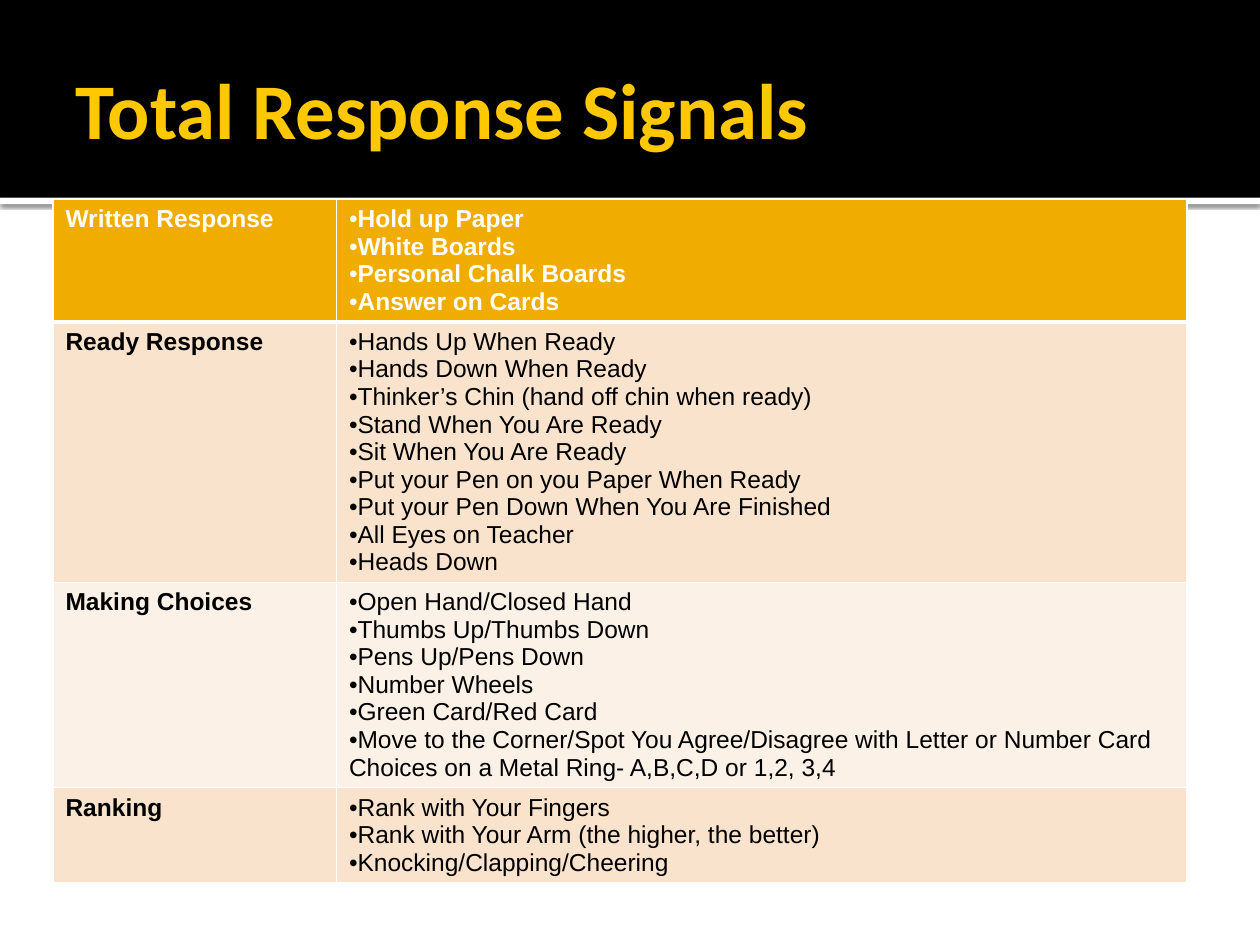
from lxml.etree import SubElement
from pptx import Presentation
from pptx.dml.color import RGBColor
from pptx.enum.shapes import MSO_SHAPE
from pptx.enum.text import MSO_ANCHOR, PP_ALIGN
from pptx.oxml.ns import qn
from pptx.util import Inches, Pt


def paint(fill, color):
    fill.solid()
    fill.fore_color.rgb = RGBColor.from_string(color)


def style(para, size, font, color, bold):
    for span in para.runs:
        span.font.size = Pt(size)
        span.font.name = font
        span.font.bold = bold
        paint(span.font.fill, color)


signals = [
    ("Written Response", "F0AD00", "FFFFFF", 4, [
        "Hold up Paper", "White Boards", "Personal Chalk Boards", "Answer on Cards"]),
    ("Ready Response", "F9E3CC", "000000", 9, [
        "Hands Up When Ready", "Hands Down When Ready",
        "Thinker’s Chin (hand off chin when ready)", "Stand When You Are Ready",
        "Sit When You Are Ready", "Put your Pen on you Paper When Ready",
        "Put your Pen Down When You Are Finished", "All Eyes on Teacher", "Heads Down"]),
    ("Making Choices", "FCF1E7", "000000", 7, [
        "Open Hand/Closed Hand", "Thumbs Up/Thumbs Down", "Pens Up/Pens Down",
        "Number Wheels", "Green Card/Red Card",
        "Move to the Corner/Spot You Agree/Disagree with Letter or Number Card "
        "Choices on a Metal Ring- A,B,C,D or 1,2, 3,4"]),
    ("Ranking", "F9E3CC", "000000", 3, [
        "Rank with Your Fingers", "Rank with Your Arm (the higher, the better)",
        "Knocking/Clapping/Cheering"]),
]

deck = Presentation()
deck.slide_width, deck.slide_height = Inches(10), Inches(7.5)
page = deck.slides.add_slide(deck.slide_layouts[5])
paint(page.background.fill, "FFFFFF")

band_height = Inches(1.57)
strip = page.shapes.add_shape(MSO_SHAPE.RECTANGLE, 0, band_height, deck.slide_width, Inches(0.05))
band = page.shapes.add_shape(MSO_SHAPE.RECTANGLE, 0, 0, deck.slide_width, band_height)
for box, color in ((strip, "FFFFFF"), (band, "000000")):
    paint(box.fill, color)
    box.line.fill.background()
    box.shadow.inherit = False
effects = strip._element.spPr.find(qn("a:effectLst"))
shadow = SubElement(effects, qn("a:outerShdw"), blurRad=str(Pt(2.5)), dist=str(Pt(0.8)),
                    dir="5400000", algn="tl", rotWithShape="0")
tone = SubElement(shadow, qn("a:srgbClr"), val="000000")
SubElement(tone, qn("a:alpha"), val="60000")

title = page.shapes.title
page.shapes._spTree.append(title._element)
title.left, title.top, title.width, title.height = (Inches(n) for n in (0.5, 0.17, 9, 1.37))
frame = title.text_frame
frame.text = "Total Response Signals"
frame.vertical_anchor = MSO_ANCHOR.MIDDLE
frame.margin_left = Inches(0.1)
frame.margin_right = frame.margin_top = frame.margin_bottom = Inches(0.05)
frame.paragraphs[0].alignment = PP_ALIGN.LEFT
style(frame.paragraphs[0], 45, "Calibri", "FFC800", True)

heights = [Inches(0.1 + 0.218 * lines) for _, _, _, lines, _ in signals]
table = page.shapes.add_table(len(signals), 2, Inches(0.42), Inches(1.58),
                              Inches(9), sum(heights)).table
table.columns[0].width = Inches(9 * 0.25)
table.columns[1].width = Inches(9 * 0.75)

for row, (label, fill, color, _, items) in enumerate(signals):
    table.rows[row].height = heights[row]
    for column, texts in enumerate(([label], items)):
        cell = table.cell(row, column)
        cell.text_frame.text = "\n".join(texts)
        for para in cell.text_frame.paragraphs:
            style(para, 14, "Arial", color, row == 0 or column == 0)
            if column == 1:
                layout = para._p.get_or_add_pPr()
                layout.set("marL", "0")
                layout.set("indent", "0")
                SubElement(layout, qn("a:buFont"), typeface="Arial")
                SubElement(layout, qn("a:buChar"), char="•")
        properties = cell._tc.get_or_add_tcPr()
        for side in ("lnL", "lnR", "lnT", "lnB"):
            thick = (row, side) in ((0, "lnB"), (1, "lnT"))
            edge = SubElement(properties, qn("a:" + side), w=str(Pt(3 if thick else 1)))
            SubElement(SubElement(edge, qn("a:solidFill")), qn("a:srgbClr"), val="FFFFFF")
        paint(cell.fill, fill)

deck.save("out.pptx")
